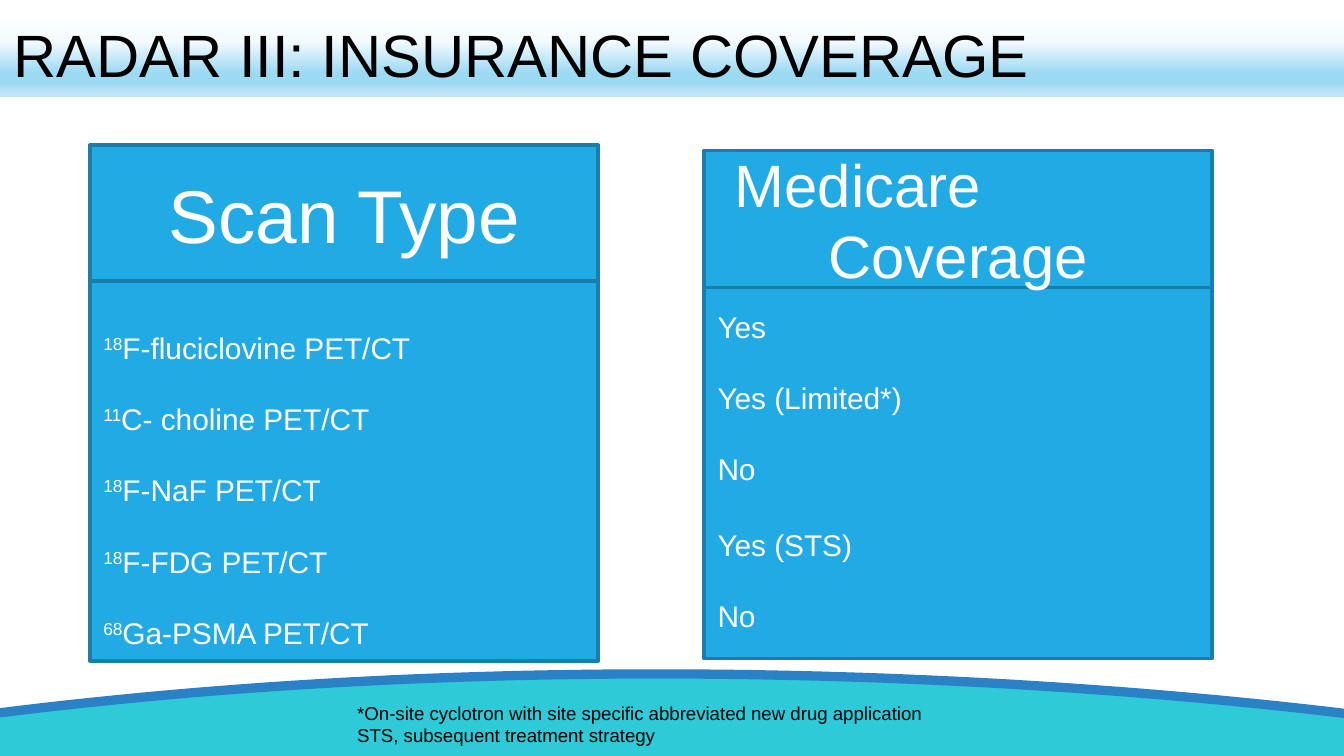
from pptx import Presentation
from pptx.dml.color import RGBColor
from pptx.enum import shapes, text
from pptx.oxml import parse_xml
from pptx.oxml.ns import nsdecls
from pptx.util import Inches, Pt


def rgb(value):
    return RGBColor.from_string(value)


def write(p, pieces, size, color):
    for content, raised in pieces:
        r = p.add_run()
        r.text = content
        r.font.name = "Arial"
        r.font.size = Pt(size)
        r.font.color.rgb = rgb(color)
        if raised:
            r.font._element.set("baseline", "30000")


prs = Presentation()
prs.slide_width = Inches(10)
prs.slide_height = Inches(10) * 9 // 16
s = prs.slides.add_slide(prs.slide_layouts[5])

waves = [
    ([(-0.04, 5.32), (3.64, 4.87), (6.93, 4.98), (10, 5.31)],
     [(10, 5.65), (-0.04, 5.65)], "2ECAD7", None),
    ([(-0.05, 5.31), (3.66, 4.84), (7.43, 5), (10.02, 5.31)],
     [], None, "2A81C6"),
]
steps = 60
for controls, corners, fill, line in waves:
    points = []
    for i in range(steps + 1):
        t = i / steps
        weights = [(1 - t) ** 3, 3 * t * (1 - t) ** 2, 3 * t ** 2 * (1 - t), t ** 3]
        points.append(tuple(sum(w * c[k] for w, c in zip(weights, controls)) for k in (0, 1)))
    points = [(Inches(x), Inches(y)) for x, y in points + corners]
    fb = s.shapes.build_freeform(*points[0])
    fb.add_line_segments(points[1:], close=bool(corners))
    sp = fb.convert_to_shape()
    sp.shadow.inherit = False
    if fill:
        sp.fill.solid()
        sp.fill.fore_color.rgb = rgb(fill)
        sp.line.fill.background()
    else:
        sp.fill.background()
        sp.line.color.rgb = rgb(line)
        sp.line.width = Pt(5)

title = s.shapes.title
title.left, title.top = Inches(0), Inches(0.08)
title.width, title.height = Inches(10.04), Inches(0.64)
title.fill.gradient()
title.fill.gradient_angle = 270
stops = title._element.spPr.find(".//{*}gsLst")
for stop in list(stops):
    stops.remove(stop)
for pos, color in [(0, "FFFFFF"), (35, "F4FBFE"), (73, "9CD9F3"), (83, "9CD9F3"), (97, "BDE6F7")]:
    stops.append(parse_xml(
        f'<a:gs {nsdecls("a")} pos="{pos * 1000}"><a:srgbClr val="{color}"/></a:gs>'))
tf = title.text_frame
tf.auto_size = text.MSO_AUTO_SIZE.NONE
tf.vertical_anchor = text.MSO_ANCHOR.MIDDLE
tf.paragraphs[0].alignment = text.PP_ALIGN.LEFT
write(tf.paragraphs[0], [("RADAR III: INSURANCE COVERAGE", False)], 32, "000000")

note = s.shapes.add_textbox(Inches(2.56), Inches(5.17), Inches(6.06), Inches(0.44))
tf = note.text_frame
tf.word_wrap = True
notes = ["*On-site cyclotron with site specific abbreviated new drug application",
         "STS, subsequent treatment strategy"]
for i, content in enumerate(notes):
    p = tf.paragraphs[0] if i == 0 else tf.add_paragraph()
    write(p, [(content, False)], 10, "000000")

scans = [("18", "F-fluciclovine PET/CT"), ("11", "C- choline PET/CT"), ("18", "F-NaF PET/CT"),
         ("18", "F-FDG PET/CT"), ("68", "Ga-PSMA PET/CT")]
scan_lines = [[(mass, True), (name, False)] for mass, name in scans]
coverage_lines = [[(c, False)] for c in ["Yes", "Yes (Limited*)", "No", "Yes (STS)", "No"]]
center, left = text.PP_ALIGN.CENTER, text.PP_ALIGN.LEFT

panels = [
    (0.67, 1.08, 1.02, 40, [[("Scan Type", False)]], [center], [0], 0.05),
    (0.67, 2.09, 2.83, 16, scan_lines, [left] * 5, [0, 19, 19, 19, 19], 0.33),
    (5.24, 2.1, 2.8, 16, coverage_lines, [left] * 5, [0, 19, 19, 21.5, 19], 0.06),
    (5.24, 1.12, 1.02, 32, [[("Medicare", False)], [("Coverage", False)]],
     [left, center], [0, 0], 0.05),
]
for x, y, height, size, lines, aligns, gaps, inset in panels:
    sp = s.shapes.add_shape(shapes.MSO_SHAPE.RECTANGLE, Inches(x), Inches(y),
                            Inches(3.78), Inches(height))
    sp.shadow.inherit = False
    sp.fill.solid()
    sp.fill.fore_color.rgb = rgb("22AAE4")
    sp.line.color.rgb = rgb("197EA9")
    sp.line.width = Pt(2)
    tf = sp.text_frame
    tf.word_wrap = True
    tf.vertical_anchor = text.MSO_ANCHOR.MIDDLE
    tf.margin_top = Inches(inset)
    for i, (pieces, align, gap) in enumerate(zip(lines, aligns, gaps)):
        p = tf.paragraphs[0] if i == 0 else tf.add_paragraph()
        p.alignment = align
        if gap:
            p.space_before = Pt(gap)
        if size == 32 and align == left:
            p._p.get_or_add_pPr().set("marL", str(Inches(0.13)))
        write(p, pieces, size, "FFFFFF")

prs.save("out.pptx")
